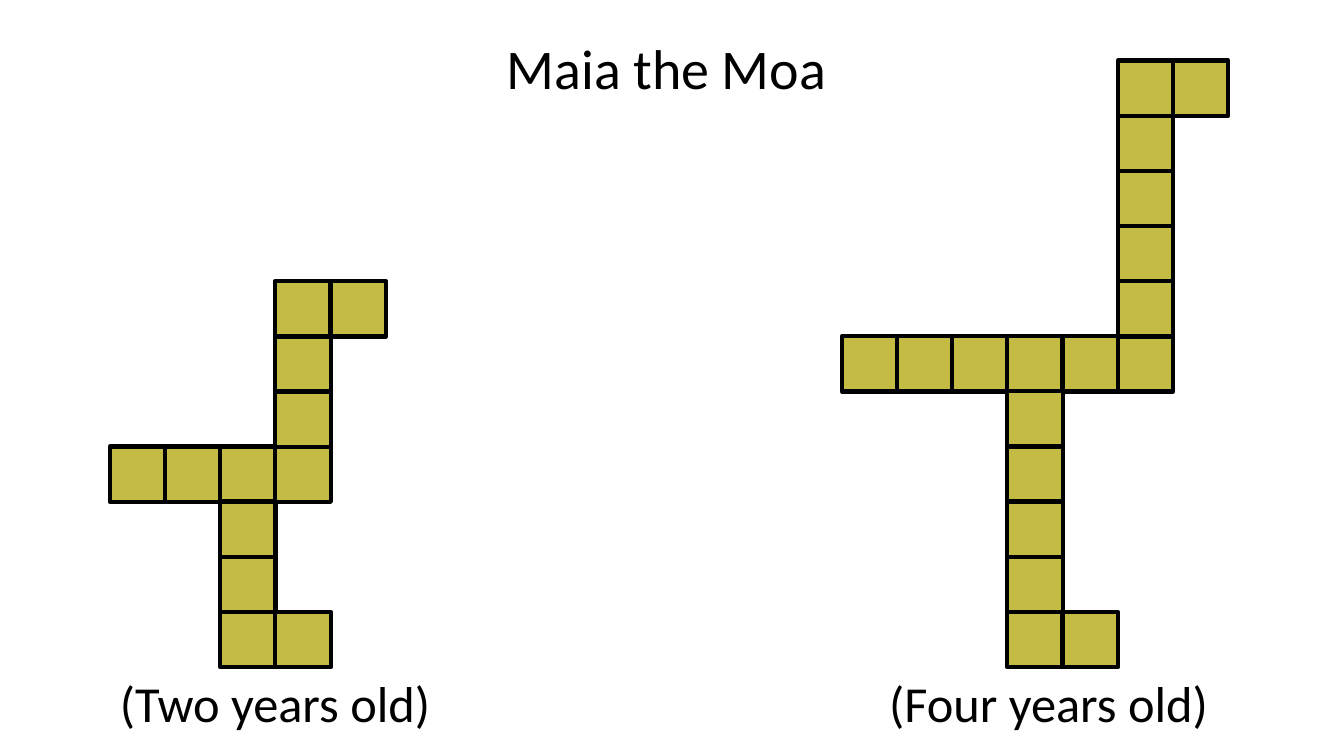
from dataclasses import dataclass

import pptx
import pptx.dml.color
import pptx.enum.shapes
import pptx.enum.text
import pptx.util

Inches = pptx.util.Inches

CELL = 0.55
PITCH = 5.47 / 10  # ten steps from the tall moa's head to its feet
FOOT_TOP = 6.07
BLACK = "000000"
MOA_GREEN = "C4BB44"


@dataclass
class Moa:
    age: int
    left: float
    leg_column: int
    caption: str
    caption_left: float

    def cells(self) -> list[tuple[int, int]]:
        """Column and row of each square; row 0 is the body, rows grow downwards."""
        limb = self.age + 1
        neck_column = self.age + 1
        body = [(column, 0) for column in range(self.age + 2)]
        neck = [(neck_column, -step) for step in range(1, limb + 1)]
        leg = [(self.leg_column, step) for step in range(1, limb + 1)]
        beak, toe = (neck_column + 1, -limb), (self.leg_column + 1, limb)
        return body + neck + leg + [beak, toe]


MOAS = [
    Moa(2, 1.09, 2, "(Two years old)", 1.09),
    Moa(4, 8.35, 3, "(Four years old)", 8.72),
]


def color(hex_code: str) -> pptx.dml.color.RGBColor:
    return pptx.dml.color.RGBColor.from_string(hex_code)


def write_text(shape, text: str, size: int, alignment) -> None:
    frame = shape.text_frame
    frame.text = text
    frame.word_wrap = True
    frame.auto_size = pptx.enum.text.MSO_AUTO_SIZE.NONE
    frame.vertical_anchor = pptx.enum.text.MSO_ANCHOR.TOP
    paragraph = frame.paragraphs[0]
    paragraph.alignment = alignment
    paragraph.line_spacing = 1.0
    paragraph.space_before = pptx.util.Pt(0)
    paragraph.font.name = "Calibri"
    paragraph.font.size = pptx.util.Pt(size)
    paragraph.font.color.rgb = color(BLACK)


def draw_moa(slide, moa: Moa) -> None:
    group = slide.shapes.add_group_shape()
    body_top = FOOT_TOP - (moa.age + 1) * PITCH
    for column, row in moa.cells():
        square = group.shapes.add_shape(
            pptx.enum.shapes.MSO_SHAPE.RECTANGLE,
            Inches(moa.left + column * PITCH), Inches(body_top + row * PITCH),
            Inches(CELL), Inches(CELL))
        square.shadow.inherit = False
        square.fill.solid()
        square.fill.fore_color.rgb = color(MOA_GREEN)
        square.line.color.rgb = color(BLACK)
        square.line.width = pptx.util.Pt(3)

    caption = slide.shapes.add_textbox(
        Inches(moa.caption_left), Inches(6.62), Inches(4.25), Inches(0.71))
    write_text(caption, moa.caption, 36, pptx.enum.text.PP_ALIGN.LEFT)


def main() -> None:
    presentation = pptx.Presentation()
    presentation.slide_width = Inches(13.33)
    presentation.slide_height = Inches(7.5)
    slide = presentation.slides.add_slide(presentation.slide_layouts.get_by_name("Title Only"))

    # Title
    title = slide.shapes.title
    title.left, title.top = Inches(3.72), Inches(0.28)
    title.width, title.height = Inches(5.78), Inches(1.08)
    write_text(title, "Maia the Moa", 40, pptx.enum.text.PP_ALIGN.CENTER)

    # Moas with their captions
    for moa in MOAS:
        draw_moa(slide, moa)

    presentation.save("out.pptx")


if __name__ == "__main__":
    main()
